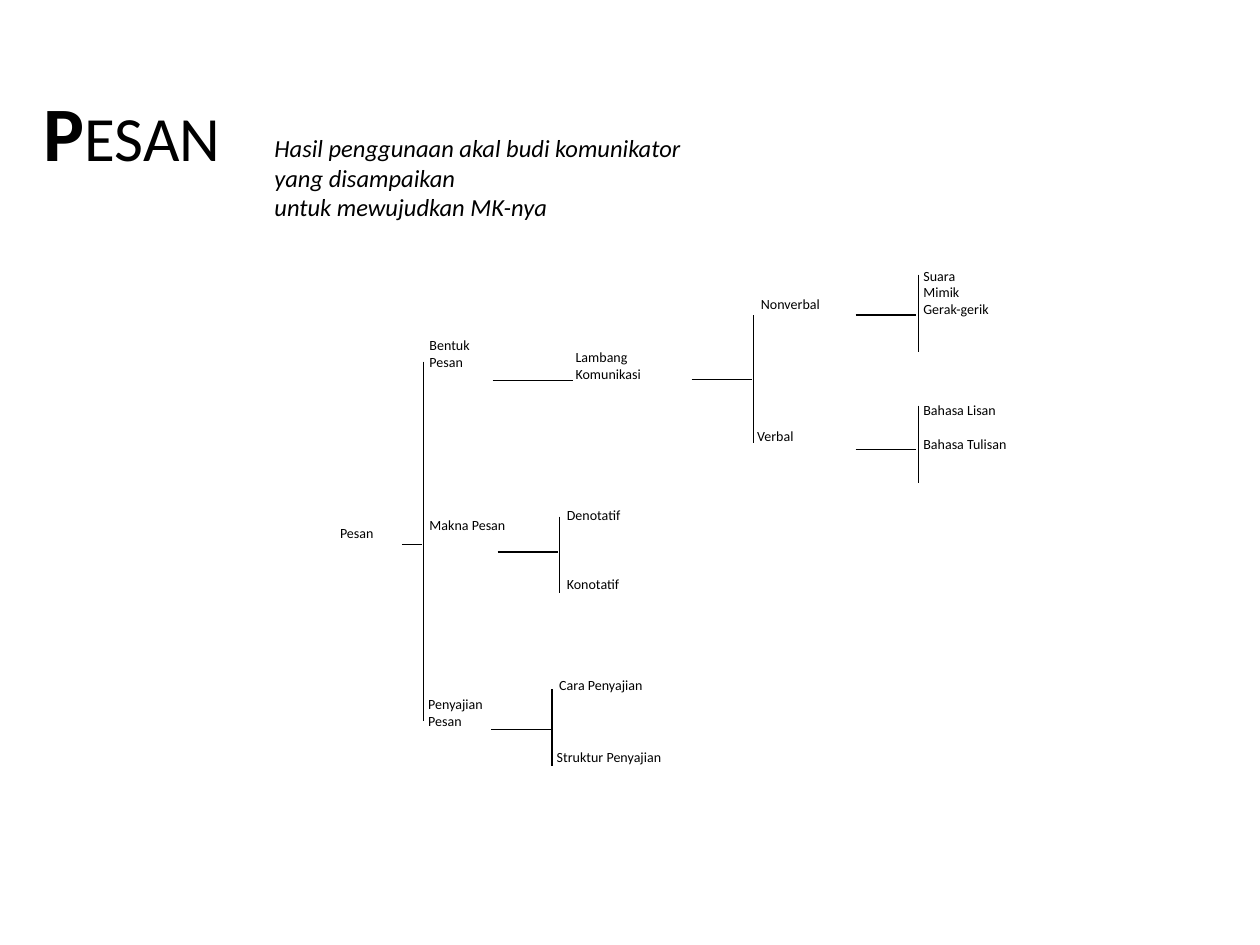
from dataclasses import dataclass

from lxml.etree import SubElement
from pptx import Presentation
from pptx.dml.color import RGBColor
from pptx.enum.shapes import MSO_CONNECTOR as Connector, MSO_SHAPE as Shape
from pptx.enum.text import MSO_ANCHOR as Anchor, PP_ALIGN as Align
from pptx.oxml.ns import qn
from pptx.util import Inches, Pt


@dataclass(frozen=True)
class Theme:
    font: str = "Calibri"
    ink: RGBColor = RGBColor(0, 0, 0)
    paper: RGBColor = RGBColor(255, 255, 255)
    label: float = 8
    quote: float = 14
    title: float = 36
    initial: float = 44
    line: float = 0.75


THEME = Theme()

# left, top, width, height, lines
BOXED_LABELS = [
    (2.6, 4.11, 1.12, 0.41, ["Pesan"]),
    (3.31, 2.62, 1.12, 0.61, ["Bentuk", "Pesan"]),
]
LABELS = [
    (3.31, 4.05, 1.12, 0.59, ["Makna Pesan"]),
    (3.3, 5.47, 1.12, 0.61, ["Penyajian", "Pesan"]),
    (4.47, 2.72, 2.4, 1.42, ["Lambang", "Komunikasi"]),
    (5.94, 2.3, 1.12, 0.61, ["Nonverbal"]),
    (5.91, 3.34, 1.12, 0.61, ["Verbal"]),
    (7.23, 2.07, 1.12, 1.02, ["Suara", "Mimik", "Gerak-gerik"]),
    (4.4, 3.97, 1.12, 0.61, ["Denotatif"]),
    (4.4, 4.52, 1.12, 0.61, ["Konotatif"]),
    (4.34, 5.32, 1.93, 0.61, ["Cara Penyajian"]),
    (4.32, 5.89, 1.93, 0.61, ["Struktur Penyajian"]),
]
LANGUAGE_LABEL = (7.23, 3.14, 1.6, 1.02, ["Bahasa Lisan", "Bahasa Tulisan"])
LANGUAGE_GAP = 9.75

# left, y, length
STEMS = [
    (3.19, 4.32, 0.16),
    (3.91, 3.02, 0.64),
    (5.49, 3.01, 0.48),
    (6.79, 2.5, 0.48),
    (6.79, 3.57, 0.48),
    (3.95, 4.38, 0.48),
    (3.9, 5.79, 0.48),
]
# x, top, height
BRACKETS = [
    (3.36, 2.87, 2.85),
    (5.98, 2.5, 1.02),
    (7.29, 2.18, 0.61),
    (7.29, 3.22, 0.61),
    (4.44, 4.1, 0.61),
    (4.38, 5.47, 0.61),
]


def add_run(paragraph, text, size, **style):
    run = paragraph.add_run()
    run.text = text
    run.font.color.rgb = THEME.ink
    for name, value in {"name": THEME.font, "size": Pt(size), **style}.items():
        setattr(run.font, name, value)


def write_lines(shape, lines, size, gap=0, **style):
    """Write one left-aligned paragraph per line, with gap points between them."""
    frame = shape.text_frame
    frame.word_wrap = True
    frame.vertical_anchor = Anchor.TOP
    for index, line in enumerate(lines):
        paragraph = frame.add_paragraph() if index else frame.paragraphs[0]
        paragraph.alignment = Align.LEFT
        if index and gap:
            paragraph.space_before = Pt(gap)
        add_run(paragraph, line, size, **style)


def add_text(slide, left, top, width, height, lines, size=THEME.label, **style):
    box = slide.shapes.add_textbox(*map(Inches, (left, top, width, height)))
    write_lines(box, lines, size, **style)


def add_boxed_label(slide, left, top, width, height, lines):
    box = slide.shapes.add_shape(Shape.RECTANGLE, *map(Inches, (left, top, width, height)))
    box.shadow.inherit = False
    box.fill.solid()
    box.fill.fore_color.rgb = THEME.paper
    box.line.fill.background()
    write_lines(box, lines, THEME.label)


def add_line(slide, x1, y1, x2, y2):
    line = slide.shapes.add_connector(Connector.STRAIGHT, *map(Inches, (x1, y1, x2, y2)))
    line.line.color.rgb = THEME.ink
    line.line.width = Pt(THEME.line)
    SubElement(line._element.spPr, qn("a:effectLst"))


def add_title(slide):
    box = slide.shapes.add_textbox(*map(Inches, (0.25, 0.41, 9, 1.25)))
    box.text_frame.word_wrap = True
    box.text_frame.vertical_anchor = Anchor.MIDDLE
    paragraph = box.text_frame.paragraphs[0]
    add_run(paragraph, "P", THEME.initial, bold=True)
    add_run(paragraph, "ESAN", THEME.title)


def add_message_tree(slide):
    for label in BOXED_LABELS:
        add_boxed_label(slide, *label)
    for label in LABELS:
        add_text(slide, *label)
    add_text(slide, *LANGUAGE_LABEL, gap=LANGUAGE_GAP)
    for left, y, length in STEMS:
        add_line(slide, left, y, left + length, y)
    for x, top, height in BRACKETS:
        add_line(slide, x, top, x, top + height)


def main():
    presentation = Presentation()
    presentation.slide_width = Inches(10)
    presentation.slide_height = Inches(7.5)
    slide = presentation.slides.add_slide(presentation.slide_layouts[6])
    add_message_tree(slide)
    add_title(slide)
    definition = [
        "Hasil penggunaan akal budi komunikator",
        "yang disampaikan",
        "untuk mewujudkan MK-nya",
    ]
    add_text(slide, 2.08, 1.01, 6.43, 0.8, definition, THEME.quote, italic=True)
    presentation.save("out.pptx")


if __name__ == "__main__":
    main()
